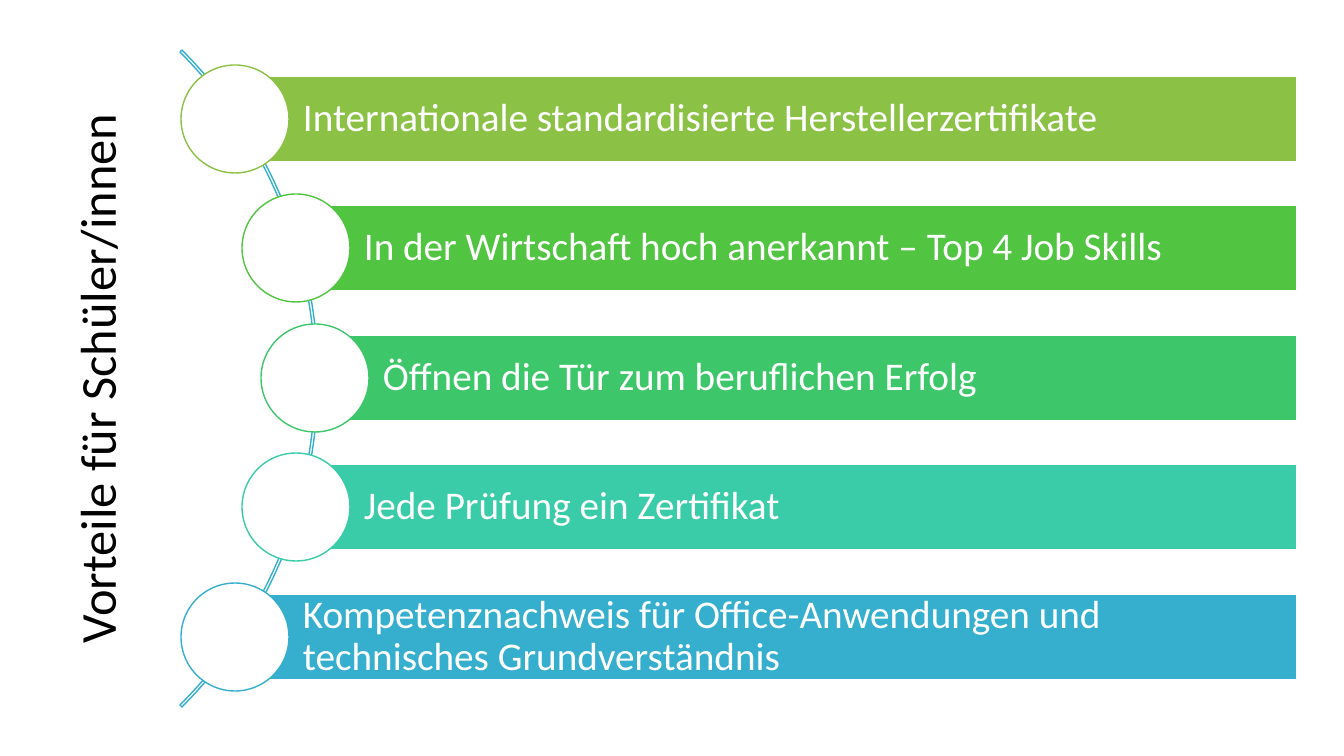
from pptx import Presentation
from pptx.dml.color import RGBColor
from pptx.enum.shapes import MSO_SHAPE
from pptx.enum.text import MSO_ANCHOR, PP_ALIGN
from pptx.util import Emu, Pt

SLIDE_WIDTH, SLIDE_HEIGHT = 1344, 756
EMU_PER_PX = 12192000 / SLIDE_WIDTH

WHITE = RGBColor(0xFF, 0xFF, 0xFF)
BLACK = RGBColor(0x00, 0x00, 0x00)
LIME = RGBColor(0x8B, 0xC1, 0x45)
GREEN = RGBColor(0x51, 0xC4, 0x41)
EMERALD = RGBColor(0x3E, 0xC7, 0x6A)
TURQUOISE = RGBColor(0x3A, 0xCB, 0xA8)
BLUE = RGBColor(0x36, 0xAF, 0xCE)

FONT = "Calibri"
MIDDLE_Y = 378
FIRST_Y, LAST_Y = 119, 637
BAR_RIGHT, BAR_HEIGHT = 1297, 86
CIRCLE_SIZE = 108
ARC_LEFT, ARC_SIZE = -611, 929

BENEFITS = [
    ("Internationale standardisierte Herstellerzertifikate", LIME, 235),
    ("In der Wirtschaft hoch anerkannt – Top 4 Job Skills", GREEN, 296),
    ("Öffnen die Tür zum beruflichen Erfolg", EMERALD, 315),
    ("Jede Prüfung ein Zertifikat", TURQUOISE, 296),
    ("Kompetenznachweis für Office-Anwendungen und technisches Grundverständnis", BLUE, 235),
]


def px(length):
    return Emu(round(length * EMU_PER_PX))


def add_outlined_shape(slide, kind, left, top, width, height, fill, line):
    shape = slide.shapes.add_shape(kind, px(left), px(top), px(width), px(height))
    shape.shadow.inherit = False
    if fill is None:
        shape.fill.background()
    else:
        shape.fill.solid()
        shape.fill.fore_color.rgb = fill
    shape.line.color.rgb = line
    shape.line.width = Pt(1)
    return shape


def write_text(paragraph, text, size, color, alignment):
    paragraph.text = text
    paragraph.alignment = alignment
    paragraph.font.name = FONT
    paragraph.font.size = Pt(size)
    paragraph.font.color.rgb = color


def add_arc(slide):
    arc = add_outlined_shape(slide, MSO_SHAPE.BLOCK_ARC, ARC_LEFT, MIDDLE_Y - ARC_SIZE // 2,
                             ARC_SIZE, ARC_SIZE, None, BLUE)
    for index, value in enumerate((189, 27, 0.003)):
        arc.adjustments[index] = value


def add_benefit(slide, text, color, center_x, center_y):
    bar = add_outlined_shape(slide, MSO_SHAPE.RECTANGLE, center_x, center_y - BAR_HEIGHT // 2,
                             BAR_RIGHT - center_x, BAR_HEIGHT, color, WHITE)
    frame = bar.text_frame
    frame.word_wrap = True
    frame.vertical_anchor = MSO_ANCHOR.MIDDLE
    frame.margin_left = px(68)
    frame.margin_top = frame.margin_right = frame.margin_bottom = px(7)
    paragraph = frame.paragraphs[0]
    paragraph.line_spacing = 0.9
    write_text(paragraph, text, 28, WHITE, PP_ALIGN.LEFT)

    radius = CIRCLE_SIZE // 2
    add_outlined_shape(slide, MSO_SHAPE.OVAL, center_x - radius, center_y - radius,
                       CIRCLE_SIZE, CIRCLE_SIZE, WHITE, color)


def add_vertical_title(slide, text):
    title = slide.shapes.add_textbox(px(-282), px(343), px(SLIDE_HEIGHT), px(71))
    title.rotation = 270
    title.text_frame.word_wrap = True
    write_text(title.text_frame.paragraphs[0], text, 36, BLACK, PP_ALIGN.CENTER)


def main():
    presentation = Presentation()
    presentation.slide_width = px(SLIDE_WIDTH)
    presentation.slide_height = px(SLIDE_HEIGHT)
    slide = presentation.slides.add_slide(presentation.slide_layouts[6])

    add_arc(slide)
    for index, (text, color, center_x) in enumerate(BENEFITS):
        center_y = FIRST_Y + (LAST_Y - FIRST_Y) * index // (len(BENEFITS) - 1)
        add_benefit(slide, text, color, center_x, center_y)
    add_vertical_title(slide, "Vorteile für Schüler/innen")

    presentation.save("out.pptx")


if __name__ == "__main__":
    main()
